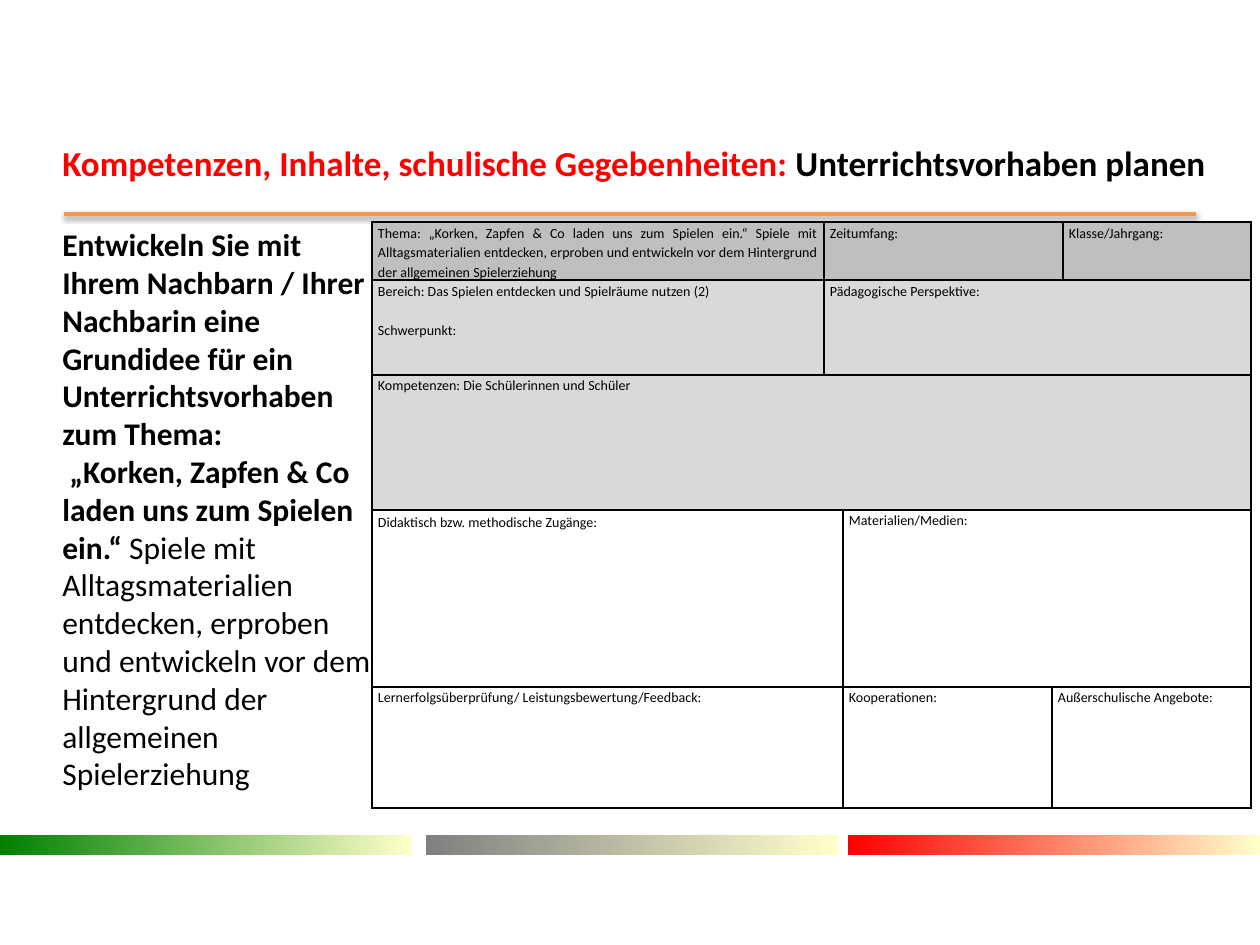
from dataclasses import dataclass

from lxml import etree
from pptx import Presentation
from pptx.dml.color import RGBColor
from pptx.enum import shapes, text
from pptx.oxml import parse_xml
from pptx.oxml.ns import nsdecls, qn
from pptx.util import Length, Pt

EMU_PER_PX = 914400 / 126
FONT = "Calibri"
BLACK, RED, CREAM = "000000", "FF0000", "FFFFCC"
DARK, LIGHT = "BFBFBF", "D9D9D9"


@dataclass(frozen=True)
class Run:
    content: str
    color: str = BLACK
    bold: bool = True


@dataclass(frozen=True)
class Field:
    """A labelled area of the planning grid."""
    row: int
    first: int
    last: int
    lines: tuple[str, ...]
    fill: str | None = None
    spacing: float | Length = 1.15


@dataclass(frozen=True)
class Bar:
    left: int
    color: str


def px(value: int) -> Length:
    return Length(round(value * EMU_PER_PX))


def rgb(value: str) -> RGBColor:
    return RGBColor.from_string(value)


def add_text(slide, left: int, top: int, width: int, height: int,
             size: int, paragraphs: list[list[Run]]) -> None:
    frame = slide.shapes.add_textbox(px(left), px(top), px(width), px(height)).text_frame
    frame.word_wrap = True
    frame.auto_size = text.MSO_AUTO_SIZE.SHAPE_TO_FIT_TEXT
    for index, runs in enumerate(paragraphs):
        paragraph = frame.add_paragraph() if index else frame.paragraphs[0]
        paragraph.font.name = FONT
        paragraph.font.size = Pt(size)
        for item in runs:
            run = paragraph.add_run()
            run.text = item.content
            run.font.bold = item.bold
            run.font.color.rgb = rgb(item.color)


def add_rule(slide, left: int, right: int, y: int) -> None:
    rule = slide.shapes.add_connector(
        shapes.MSO_CONNECTOR.STRAIGHT, px(left), px(y), px(right), px(y))
    rule.line.color.rgb = rgb("F79646")
    rule.line.width = Pt(2)
    rule.element.spPr.append(parse_xml(
        f'<a:effectLst {nsdecls("a")}><a:outerShdw blurRad="39370" dist="20320" '
        'dir="5400000" rotWithShape="0"><a:srgbClr val="000000">'
        '<a:alpha val="38000"/></a:srgbClr></a:outerShdw></a:effectLst>'))


def add_bar(slide, bar: Bar) -> None:
    shape = slide.shapes.add_shape(
        shapes.MSO_SHAPE.RECTANGLE, px(bar.left), px(835), px(412), px(20))
    shape.shadow.inherit = False
    shape.line.fill.background()
    shape.fill.gradient()
    shape.fill.gradient_angle = 0
    for stop, color, position in zip(shape.fill.gradient_stops, (bar.color, CREAM), (0, 1)):
        stop.color.rgb = rgb(color)
        stop.position = position


def prepare_cell(cell) -> None:
    """Narrow margins, no fill and a thin black border on every side."""
    cell.margin_left = cell.margin_right = px(6)
    cell.margin_top = cell.margin_bottom = 0
    properties = cell._tc.get_or_add_tcPr()
    for side in ("a:lnL", "a:lnR", "a:lnT", "a:lnB"):
        border = etree.SubElement(properties, qn(side), w=str(Pt(1)))
        fill = etree.SubElement(border, qn("a:solidFill"))
        etree.SubElement(fill, qn("a:srgbClr"), val=BLACK)
    cell.fill.background()


def fill_field(table, field: Field) -> None:
    cell = table.cell(field.row, field.first)
    if field.last > field.first:
        cell.merge(table.cell(field.row, field.last))
    if field.fill:
        for column in range(field.first, field.last + 1):
            part = table.cell(field.row, column)
            part.fill.solid()
            part.fill.fore_color.rgb = rgb(field.fill)
    frame = cell.text_frame
    for index, line in enumerate(field.lines):
        paragraph = frame.add_paragraph() if index else frame.paragraphs[0]
        paragraph.text = line
        paragraph.alignment = text.PP_ALIGN.JUSTIFY
        paragraph.line_spacing = field.spacing
        if index:
            paragraph.space_before = Pt(11)
        paragraph.font.name = FONT
        paragraph.font.size = Pt(8)
        paragraph.font.color.rgb = rgb(BLACK)


def add_grid(slide, left: int, top: int, widths: list[int], heights: list[int],
             fields: list[Field]) -> None:
    table = slide.shapes.add_table(
        len(heights), len(widths), px(left), px(top), px(sum(widths)), px(sum(heights))).table
    table.first_row = table.horz_banding = False
    for column, width in zip(table.columns, widths):
        column.width = px(width)
    for row, height in zip(table.rows, heights):
        row.height = px(height)
        for cell in row.cells:
            prepare_cell(cell)
    for field in fields:
        fill_field(table, field)


TOPIC = "Spiele mit Alltagsmaterialien entdecken, erproben und entwickeln " \
        "vor dem Hintergrund der allgemeinen Spielerziehung"
SLOGAN = "„Korken, Zapfen & Co laden uns zum Spielen ein.“"

TITLE = [[Run("Kompetenzen, Inhalte, schulische Gegebenheiten: ", RED),
          Run("Unterrichtsvorhaben planen")]]
TASK = [
    [Run("Entwickeln Sie mit Ihrem Nachbarn / Ihrer")],
    [Run("Nachbarin eine Grundidee für ein")],
    [Run("Unterrichtsvorhaben zum Thema:")],
    [Run(f" {SLOGAN}"), Run(f" {TOPIC}", bold=False)],
]
FIELDS = [
    Field(0, 0, 0, (f"Thema: {SLOGAN} {TOPIC}",), DARK),
    Field(0, 1, 3, ("Zeitumfang:",), DARK),
    Field(0, 4, 4, ("Klasse/Jahrgang:",), DARK),
    Field(1, 0, 0, ("Bereich: Das Spielen entdecken und Spielräume nutzen (2)",
                    "Schwerpunkt:"), LIGHT),
    Field(1, 1, 4, ("Pädagogische Perspektive:",), LIGHT),
    Field(2, 0, 4, ("Kompetenzen: Die Schülerinnen und Schüler",), LIGHT),
    Field(3, 0, 1, ("Didaktisch bzw. methodische Zugänge:",), spacing=Pt(12)),
    Field(3, 2, 4, ("Materialien/Medien:",)),
    Field(4, 0, 1, ("Lernerfolgsüberprüfung/ Leistungsbewertung/Feedback:",)),
    Field(4, 2, 2, ("Kooperationen:",)),
    Field(4, 3, 4, ("Außerschulische Angebote:",)),
]
BARS = [Bar(0, "008000"), Bar(426, "808080"), Bar(848, RED)]


def main() -> None:
    presentation = Presentation()
    presentation.slide_width, presentation.slide_height = px(1260), px(945)
    slide = presentation.slides.add_slide(presentation.slide_layouts[6])

    # Rule below the title and coloured bars at the foot
    add_rule(slide, 64, 1196, 214)
    for bar in BARS:
        add_bar(slide, bar)

    # Title and task
    add_text(slide, 50, 135, 1196, 55, 20, TITLE)
    add_text(slide, 50, 219, 343, 585, 18, TASK)

    # Planning grid
    add_grid(slide, 372, 222, [452, 19, 209, 11, 188], [58, 95, 135, 177, 121], FIELDS)

    presentation.save("out.pptx")


if __name__ == "__main__":
    main()
